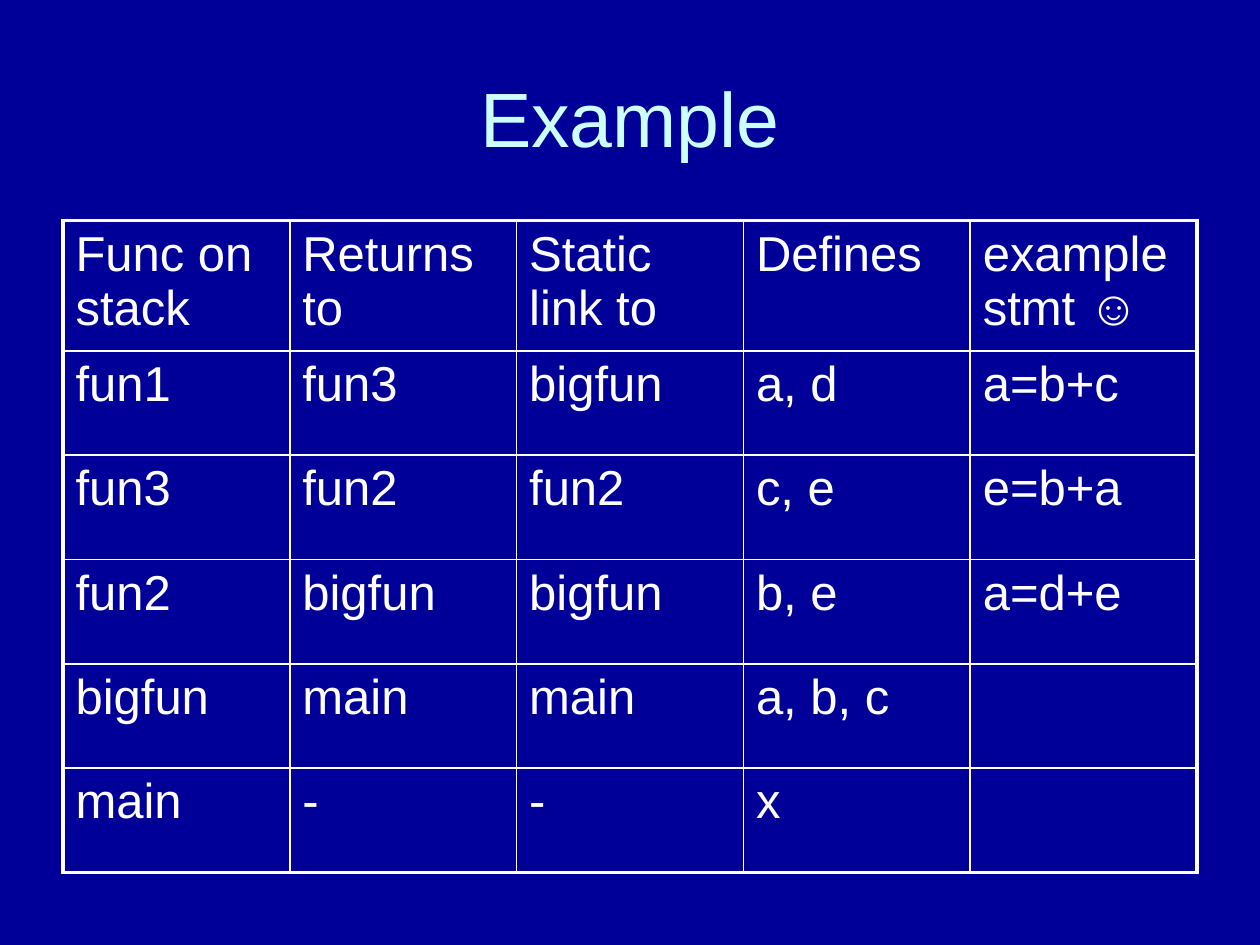
from lxml.etree import SubElement
from pptx import Presentation
from pptx.dml.color import RGBColor
from pptx.enum.text import MSO_ANCHOR, PP_ALIGN
from pptx.oxml.ns import qn
from pptx.util import Inches, Pt

STACK_FRAMES = [
    ["Func on stack", "Returns to", "Static link to", "Defines", "example stmt ☺"],
    ["fun1", "fun3", "bigfun", "a, d", "a=b+c"],
    ["fun3", "fun2", "fun2", "c, e", "e=b+a"],
    ["fun2", "bigfun", "bigfun", "b, e", "a=d+e"],
    ["bigfun", "main", "main", "a, b, c", ""],
    ["main", "-", "-", "x", ""],
]


def color(value):
    """Turn a hex string into a colour."""
    return RGBColor.from_string(value)


def write(frame, text, size=28, ink="FFFFFF", font="Arial", align=PP_ALIGN.LEFT):
    """Put formatted text in the first paragraph of a text frame."""
    frame.word_wrap = True
    paragraph = frame.paragraphs[0]
    paragraph.alignment = align
    paragraph.font.size = Pt(size)
    if text:
        run = paragraph.add_run()
        run.text = text
        run.font.size = Pt(size)
        run.font.name = font
        run.font.color.rgb = color(ink)


class Deck:
    """Hold the style and the current slide."""

    paper, title_ink, rule = "000099", "CCFFFF", "FFFFFF"
    outer, inner = 2.25, 1
    margin = 0.05
    header_share = 1.25

    def __init__(self, width=10, height=7.5):
        """Open a presentation with one blank slide."""
        self.presentation = Presentation()
        self.presentation.slide_width = Inches(width)
        self.presentation.slide_height = Inches(height)
        self.width, self.height = Inches(width), Inches(height)
        self.slide = self.presentation.slides.add_slide(self.presentation.slide_layouts[6])
        background = self.slide.background.fill
        background.solid()
        background.fore_color.rgb = color(self.paper)

    def area(self, top, height):
        """Give the box between the side margins, from shares of the slide."""
        left = round(self.width * self.margin)
        return left, round(self.height * top), self.width - 2 * left, round(self.height * height)

    def title(self, text, top, height):
        """Add the centred heading."""
        frame = self.slide.shapes.add_textbox(*self.area(top, height)).text_frame
        frame.vertical_anchor = MSO_ANCHOR.MIDDLE
        write(frame, text, size=44, ink=self.title_ink, align=PP_ALIGN.CENTER)

    def border(self, cell, **weights):
        """Draw the four sides of a cell, each with its weight in points."""
        properties = cell._tc.get_or_add_tcPr()
        for position, (side, weight) in enumerate(weights.items()):
            line = properties.makeelement(qn(f"a:ln{side}"), {"w": str(Pt(weight))})
            fill = SubElement(line, qn("a:solidFill"))
            SubElement(fill, qn("a:srgbClr"), val=self.rule)
            properties.insert(position, line)

    def table(self, rows, top, height):
        """Add a ruled table with a taller header and a heavy outer frame."""
        last_row, last_column = len(rows) - 1, len(rows[0]) - 1
        box = self.area(top, height)
        grid = self.slide.shapes.add_table(len(rows), len(rows[0]), *box).table
        grid.first_row = grid.horz_banding = False
        unit = box[3] / (last_row + self.header_share)
        for r, values in enumerate(rows):
            grid.rows[r].height = round(unit * (1 if r else self.header_share))
            for c, value in enumerate(values):
                cell = grid.cell(r, c)
                cell.fill.background()
                write(cell.text_frame, value)
                self.border(
                    cell,
                    L=self.inner if c else self.outer,
                    R=self.outer if c == last_column else self.inner,
                    T=self.inner if r else self.outer,
                    B=self.outer if r == last_row else self.inner,
                )


def main():
    """Build and save the slide."""
    deck = Deck()
    deck.title("Example", top=0.04, height=1 / 6)
    deck.table(STACK_FRAMES, top=7 / 30, height=0.69)
    deck.presentation.save("out.pptx")


if __name__ == "__main__":
    main()
